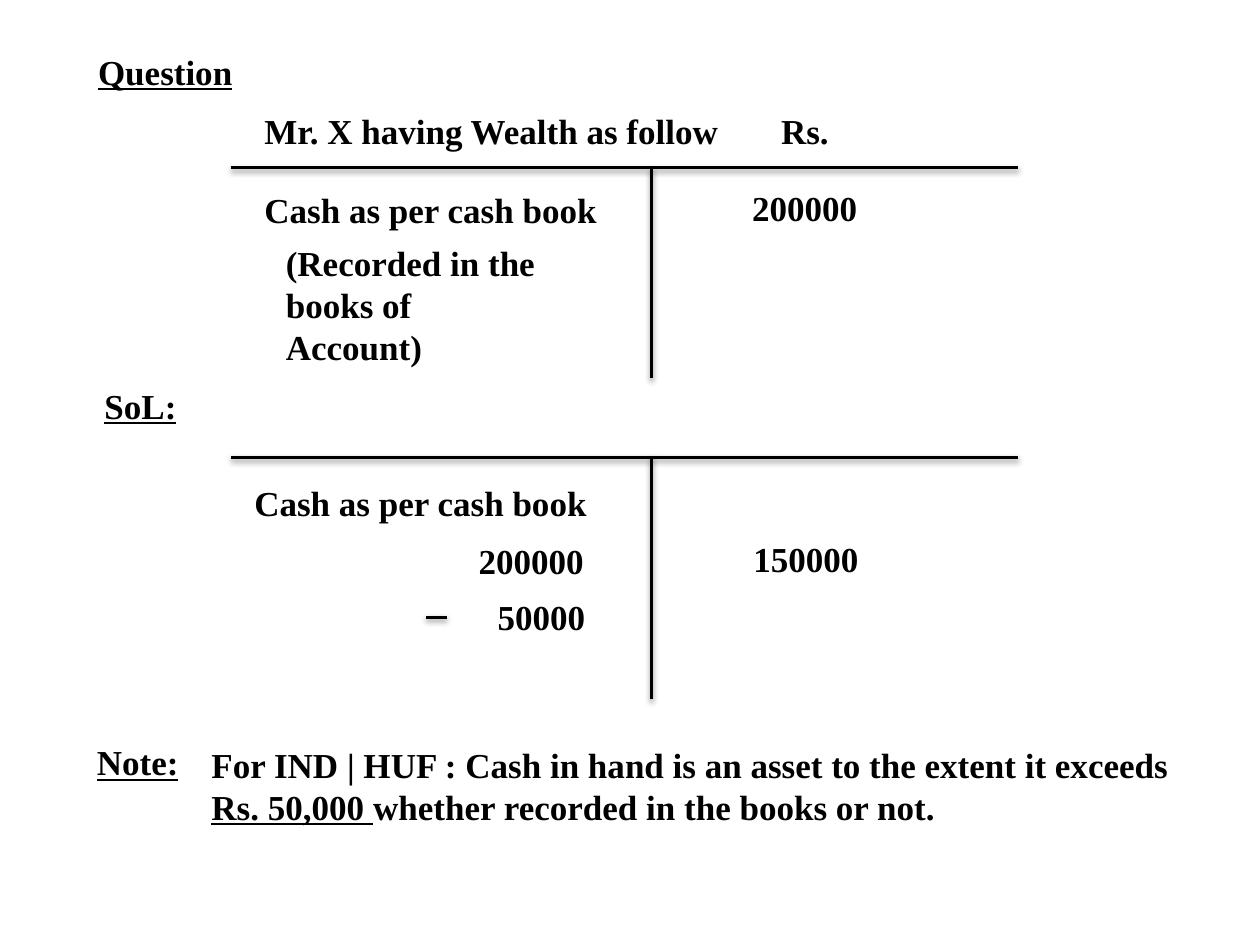
from dataclasses import dataclass

from pptx import Presentation, util as u
from pptx.dml.color import RGBColor
from pptx.enum import shapes, text
from pptx.oxml import parse_xml
from pptx.oxml.ns import nsdecls


@dataclass(frozen=True)
class Theme:
    font: str = "Times New Roman"
    size: int = 20
    ink: str = "000000"
    paper: str = "FFFFFF"
    line_width: int = 2


theme = Theme()
ink = RGBColor.from_string(theme.ink)
ONE_LINE, TWO_LINES = 0.44, 0.77

presentation = Presentation()
presentation.slide_width = u.Inches(10)
presentation.slide_height = u.Inches(7.5)
slide = presentation.slides.add_slide(presentation.slide_layouts[6])
slide.background.fill.solid()
slide.background.fill.fore_color.rgb = RGBColor.from_string(theme.paper)


def add_text(left, top, width, height, *runs):
    """Add a text box; each run is a pair of wording and underline."""
    shape = slide.shapes.add_textbox(*map(u.Inches, (left, top, width, height)))
    frame = shape.text_frame
    frame.word_wrap = True
    frame.auto_size = text.MSO_AUTO_SIZE.SHAPE_TO_FIT_TEXT
    paragraph = frame.paragraphs[0]
    for wording, underline in runs:
        run = paragraph.add_run()
        run.text = wording
        run.font.name = theme.font
        run.font.size = u.Pt(theme.size)
        run.font.bold = True
        run.font.underline = underline
        run.font.color.rgb = ink


def add_rule(x1, y1, x2, y2):
    """Add a straight line with a soft shadow below it."""
    line = slide.shapes.add_connector(
        shapes.MSO_CONNECTOR.STRAIGHT, *map(u.Inches, (x1, y1, x2, y2)))
    line.line.color.rgb = ink
    line.line.width = u.Pt(theme.line_width)
    line._element.spPr.append(parse_xml(
        f'<a:effectLst {nsdecls("a")}>'
        '<a:outerShdw blurRad="40000" dist="20000" dir="5400000" rotWithShape="0">'
        f'<a:srgbClr val="{theme.ink}"><a:alpha val="38000"/></a:srgbClr>'
        '</a:outerShdw></a:effectLst>'))


# Section headings
for heading, left, top, width in [
    ("Question", 0.68, 0.35, 1.83),
    ("SoL:", 0.73, 3, 1.08),
    ("Note:", 0.67, 5.83, 1),
]:
    add_text(left, top, width, ONE_LINE, (heading, True))

# T-accounts for the question and the solution
for top, bottom in [(1.33, 3), (3.63, 5.55)]:
    add_rule(1.83, top, 8.08, top)
    add_rule(5.17, top, 5.17, bottom)

# Account entries
for entry, left, top, width, height in [
    ("Mr. X having Wealth as follow", 2, 0.82, 3.83, ONE_LINE),
    ("Rs.", 6.1, 0.82, 0.75, ONE_LINE),
    ("Cash as per cash book", 2, 1.45, 3, ONE_LINE),
    ("(Recorded in the books of Account)", 2.17, 1.87, 2.33, TWO_LINES),
    ("200000", 5.87, 1.43, 1.42, ONE_LINE),
    ("Cash as per cash book", 1.92, 3.77, 3, ONE_LINE),
    ("200000", 3.7, 4.23, 1.25, ONE_LINE),
    ("50000", 3.85, 4.68, 1.08, ONE_LINE),
    ("150000", 5.88, 4.22, 1.12, ONE_LINE),
]:
    add_text(left, top, width, height, (entry, False))

# Minus sign before the deduction
add_rule(3.38, 4.9, 3.55, 4.9)

# Note
add_text(
    1.58, 5.85, 7.83, TWO_LINES,
    ("For IND | HUF : Cash in hand is an asset to the extent it exceeds ", False),
    ("Rs. 50,000 ", True),
    ("whether recorded in the books or not.", False),
)

presentation.save("out.pptx")
